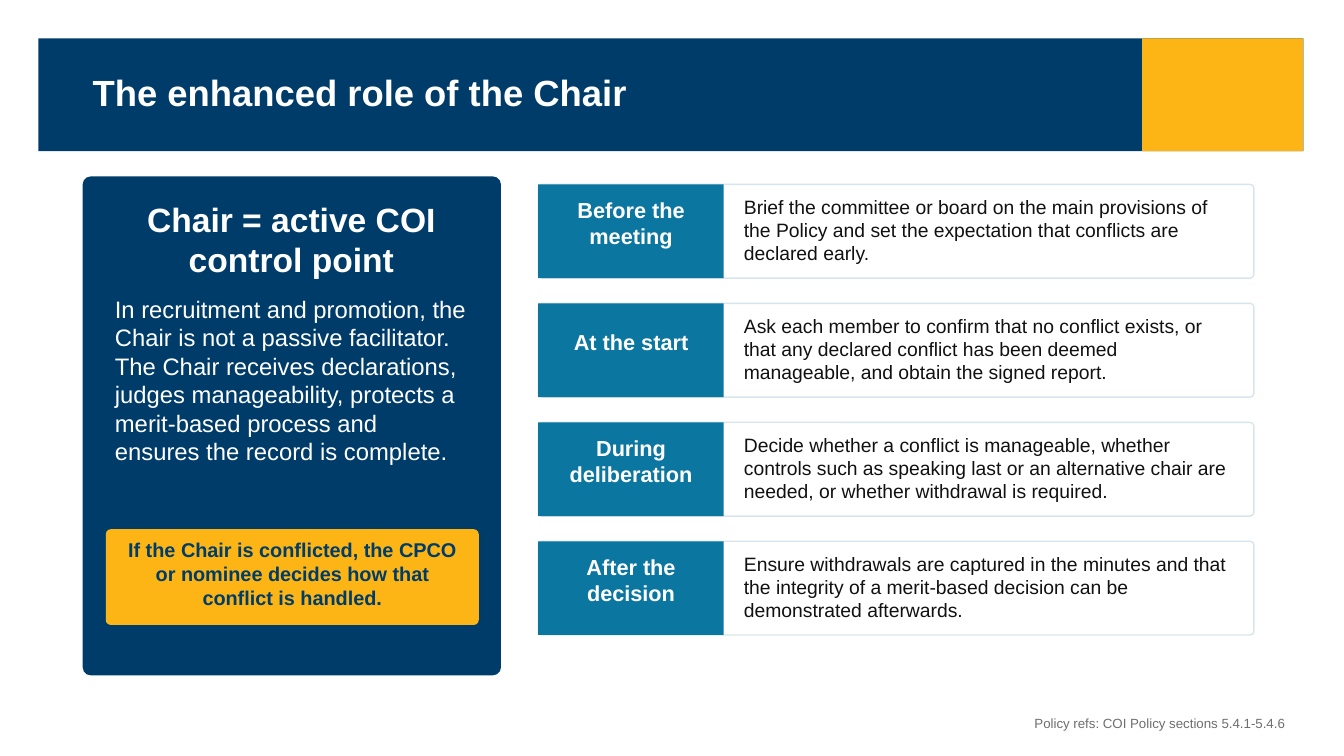
from pptx import Presentation
from pptx.dml.color import RGBColor
from pptx.enum import shapes, text
from pptx.util import Pt

COLOURS = {
    "navy": "003C69",
    "gold": "FDB515",
    "teal": "0B76A0",
    "border": "D9E5EC",
    "white": "FFFFFF",
    "ink": "111111",
    "grey": "6E6E6E",
}
LEFT, CENTRE, RIGHT = text.PP_ALIGN.LEFT, text.PP_ALIGN.CENTER, text.PP_ALIGN.RIGHT

STAGES = [
    ("Before the meeting",
     "Brief the committee or board on the main provisions of the Policy "
     "and set the expectation that conflicts are declared early."),
    ("At the start",
     "Ask each member to confirm that no conflict exists, or that any declared "
     "conflict has been deemed manageable, and obtain the signed report."),
    ("During deliberation",
     "Decide whether a conflict is manageable, whether controls such as speaking last "
     "or an alternative chair are needed, or whether withdrawal is required."),
    ("After the decision",
     "Ensure withdrawals are captured in the minutes and that the integrity "
     "of a merit-based decision can be demonstrated afterwards."),
]
STAGE_LEFT, STAGE_TOP, STAGE_PITCH = 384.48, 131.76, 84.96
STAGE_WIDTH, STAGE_HEIGHT, LABEL_WIDTH = 511.2, 66.96, 132.48


def colour(name):
    return RGBColor.from_string(COLOURS[name])


def add_block(page, left, top, width, height, fill, radius=0, line=None):
    """Add a filled rectangle, rounded when a corner radius in points is given."""
    kind = shapes.MSO_SHAPE.ROUNDED_RECTANGLE if radius else shapes.MSO_SHAPE.RECTANGLE
    block = page.shapes.add_shape(kind, Pt(left), Pt(top), Pt(width), Pt(height))
    if radius:
        block.adjustments[0] = radius / min(width, height)
    block.shadow.inherit = False
    block.fill.solid()
    block.fill.fore_color.rgb = colour(fill)
    if line:
        block.line.color.rgb = colour(line)
        block.line.width = Pt(1)
    else:
        block.line.fill.background()


def add_text(page, left, top, width, height, words, size, ink, bold=False, align=LEFT):
    box = page.shapes.add_textbox(Pt(left), Pt(top), Pt(width), Pt(height))
    frame = box.text_frame
    frame.word_wrap = True
    frame.vertical_anchor = text.MSO_ANCHOR.MIDDLE
    frame.margin_left = frame.margin_right = frame.margin_top = frame.margin_bottom = 0
    frame.text = words
    para = frame.paragraphs[0]
    para.alignment = align
    font = para.runs[0].font
    font.name = "Arial"
    font.size = Pt(size)
    font.bold = bold
    font.color.rgb = colour(ink)


def add_header(page):
    add_block(page, 27.36, 27.36, 903.6, 80.64, "navy")
    add_block(page, 815.76, 27.36, 115.2, 80.64, "gold")
    add_text(page, 66.24, 51.84, 712.8, 27.36,
             "The enhanced role of the Chair", 26, "white", bold=True)


def add_chair_panel(page):
    add_block(page, 59.04, 126, 298.8, 356.4, "navy", radius=5.76)
    add_text(page, 77.76, 149.76, 260.64, 41.76,
             "Chair = active COI control point", 24, "white", bold=True, align=CENTRE)
    add_text(page, 82.08, 207.36, 252, 128.16,
             "In recruitment and promotion, the Chair is not a passive facilitator. "
             "The Chair receives declarations, judges manageability, protects a "
             "merit-based process and ensures the record is complete.", 17, "white")
    add_block(page, 75.6, 378, 266.4, 68.4, "gold", radius=3.6)
    add_text(page, 87.84, 392.4, 241.92, 34.56,
             "If the Chair is conflicted, the CPCO or nominee decides "
             "how that conflict is handled.", 14.2, "navy", bold=True, align=CENTRE)


def add_stage(page, top, label, duty):
    add_block(page, STAGE_LEFT, top, STAGE_WIDTH, STAGE_HEIGHT, "white",
              radius=2.88, line="border")
    add_block(page, STAGE_LEFT, top, LABEL_WIDTH, STAGE_HEIGHT, "teal")
    add_text(page, STAGE_LEFT + 12.96, top + 18.72, 106.56, 17.28,
             label, 15.5, "white", bold=True, align=CENTRE)
    add_text(page, STAGE_LEFT + 146.88, top + 11.52, 347.04, 41.76, duty, 13.8, "ink")


def main():
    deck = Presentation()
    deck.slide_width, deck.slide_height = Pt(960), Pt(540)
    page = deck.slides.add_slide(deck.slide_layouts[6])
    add_header(page)
    add_text(page, 43.2, 509.76, 874.8, 12.96,
             "Policy refs: COI Policy sections 5.4.1-5.4.6", 9.5, "grey", align=RIGHT)
    add_chair_panel(page)
    for index, (label, duty) in enumerate(STAGES):
        add_stage(page, STAGE_TOP + index * STAGE_PITCH, label, duty)
    deck.save("out.pptx")


if __name__ == "__main__":
    main()
